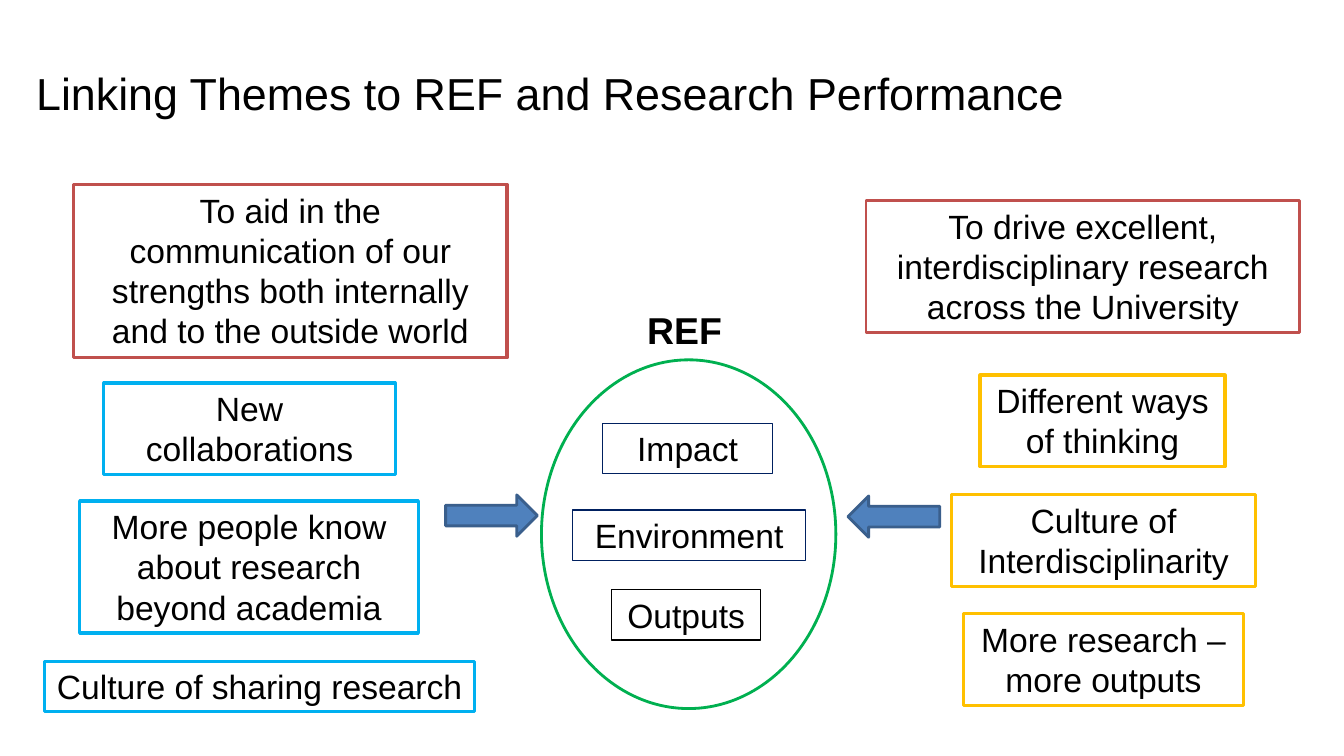
import pptx
import pptx.util
import pptx.dml.color
import pptx.enum.shapes
import pptx.enum.text
from dataclasses import dataclass

Inches = pptx.util.Inches
Shape = pptx.enum.shapes.MSO_SHAPE
Align = pptx.enum.text.PP_ALIGN


@dataclass(frozen=True)
class Theme:
    font: str = "Arial"
    text: str = "000000"
    white: str = "FFFFFF"
    aim: str = "C0504D"
    sharing: str = "00B0F0"
    crossing: str = "FFC000"
    ref: str = "00B050"
    navy: str = "002060"
    arrow: str = "4F81BD"
    arrow_edge: str = "3A5F8C"
    title_size: float = 32
    label_size: float = 26.7
    body_size: float = 24
    thick: float = 2.25
    medium: float = 2
    thin: float = 0.75


def rgb(code):
    return pptx.dml.color.RGBColor.from_string(code)


def write(shape, text, *, size, font, color, bold=False, align=Align.LEFT, wrap=True):
    frame = shape.text_frame
    frame.word_wrap = wrap
    frame.vertical_anchor = pptx.enum.text.MSO_ANCHOR.TOP
    frame.auto_size = pptx.enum.text.MSO_AUTO_SIZE.SHAPE_TO_FIT_TEXT
    para = frame.paragraphs[0]
    para.alignment = align
    span = para.add_run()
    span.text = text
    span.font.name = font
    span.font.size = pptx.util.Pt(size)
    span.font.bold = bold
    span.font.color.rgb = rgb(color)


class SlideBuilder:
    def __init__(self, page, theme):
        self.page = page
        self.theme = theme

    def label(self, text, place, size, **style):
        box = self.page.shapes.add_textbox(*map(Inches, place))
        write(box, text, size=size, font=self.theme.font, color=self.theme.text, **style)

    def outline(self, kind, place, line, width, fill=None):
        shape = self.page.shapes.add_shape(kind, *map(Inches, place))
        shape.shadow.inherit = False
        if fill:
            shape.fill.solid()
            shape.fill.fore_color.rgb = rgb(fill)
        else:
            shape.fill.background()
        shape.line.color.rgb = rgb(line)
        shape.line.width = pptx.util.Pt(width)
        return shape

    def box(self, text, place, line, width, fill=None, wrap=True):
        shape = self.outline(Shape.RECTANGLE, place, line, width, fill)
        write(shape, text, size=self.theme.body_size, font=self.theme.font,
              color=self.theme.text, align=Align.CENTER, wrap=wrap)

    def arrow(self, left, top, rotation=0):
        shape = self.outline(Shape.RIGHT_ARROW, (left, top, 0.91, 0.41),
                             self.theme.arrow_edge, self.theme.medium, self.theme.arrow)
        shape.rotation = rotation


def main():
    deck = pptx.Presentation()
    deck.slide_width, deck.slide_height = Inches(13.33), Inches(7.5)
    theme = Theme()
    slide = SlideBuilder(deck.slides.add_slide(deck.slide_layouts[6]), theme)

    # Title
    slide.label("Linking Themes to REF and Research Performance",
                (0.26, 0.6, 11.34, 0.64), theme.title_size)

    # Aims of the themes
    slide.box("To aid in the communication of our strengths both internally "
              "and to the outside world",
              (0.73, 1.83, 4.3, 1.72), theme.aim, theme.thick, theme.white)
    slide.box("To drive excellent, interdisciplinary research across the University",
              (8.59, 1.99, 4.3, 1.31), theme.aim, theme.medium, theme.white)

    # Parts of the REF
    for text, place, line in (
        ("Impact", (5.98, 4.2, 1.68, 0.5), theme.navy),
        ("Environment", (5.68, 5.06, 2.31, 0.5), theme.navy),
        ("Outputs", (6.07, 5.85, 1.47, 0.5), theme.text),
    ):
        slide.box(text, place, line, theme.thin)

    # Benefits of communication
    for text, place, wrap in (
        ("New collaborations", (1.03, 3.8, 2.89, 0.91), True),
        ("More people know about research beyond academia", (0.79, 4.97, 3.36, 1.31), True),
        ("Culture of sharing research", (0.44, 6.56, 4.27, 0.5), False),
    ):
        slide.box(text, place, theme.sharing, theme.thick, theme.white, wrap)

    # Benefits of interdisciplinary research
    for text, place in (
        ("Different ways of thinking", (9.72, 3.72, 2.43, 0.91)),
        ("Culture of Interdisciplinarity", (9.44, 4.91, 3.01, 0.91)),
        ("More research – more outputs", (9.56, 6.09, 2.77, 0.91)),
    ):
        slide.box(text, place, theme.crossing, theme.thick)

    # REF circle and the arrows leading to it
    slide.outline(Shape.OVAL, (5.37, 3.57, 2.92, 3.46), theme.ref, theme.medium)
    slide.label("REF", (6.32, 3, 0.95, 0.55), theme.label_size, bold=True, wrap=False)
    slide.arrow(4.42, 4.91)
    slide.arrow(8.41, 4.92, rotation=180)

    deck.save("out.pptx")


if __name__ == "__main__":
    main()
